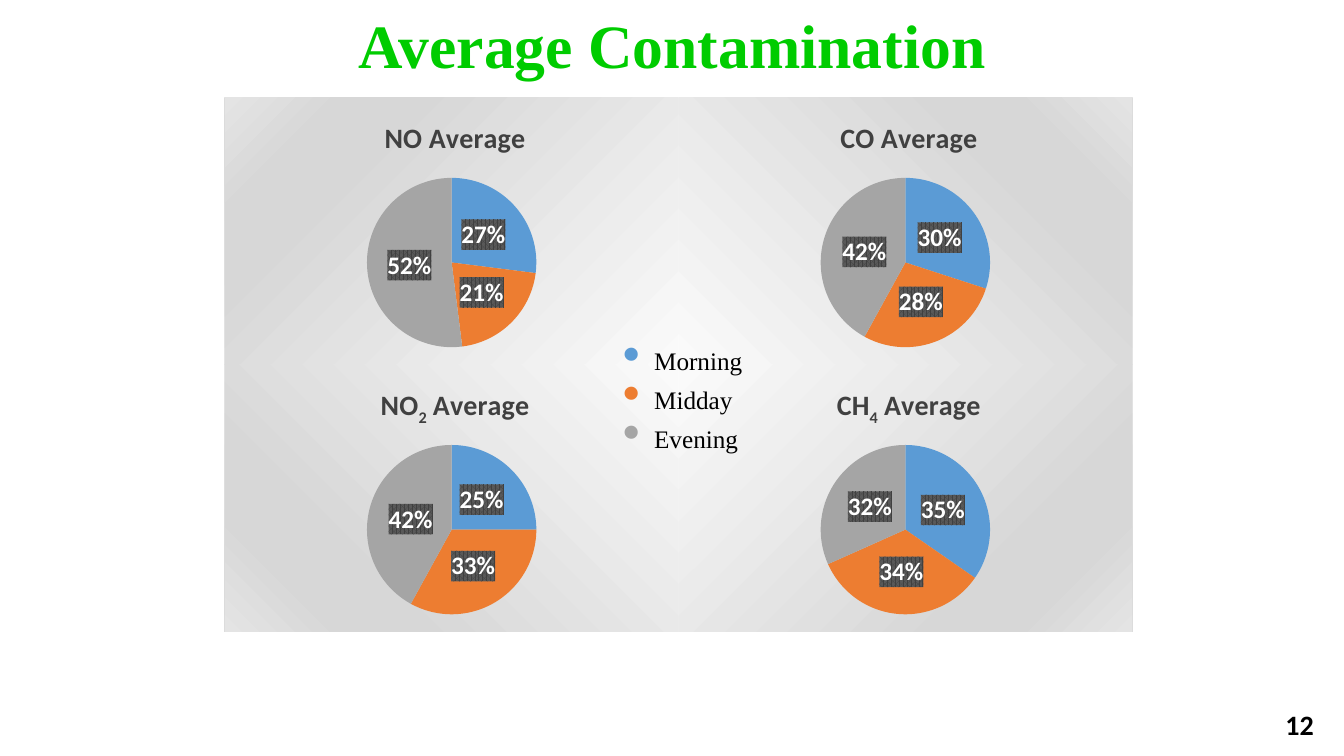
from lxml import etree
from pptx import Presentation
from pptx.chart.data import CategoryChartData
from pptx.dml.color import RGBColor
from pptx.enum.chart import XL_CHART_TYPE, XL_LABEL_POSITION
from pptx.enum.text import MSO_ANCHOR, MSO_AUTO_SIZE, PP_ALIGN
from pptx.oxml import parse_xml
from pptx.oxml.ns import nsdecls, qn
from pptx.util import Inches, Pt


def style_font(font, name, size, color, bold=False):
    font.name, font.size, font.bold = name, Pt(size), bold
    font.color.rgb = RGBColor.from_string(color)


def add_text(left, top, width, height, lines, anchor=MSO_ANCHOR.TOP):
    """Add a wrapping text box with one paragraph per line; return its frame."""
    frame = slide.shapes.add_textbox(
        Inches(left), Inches(top), Inches(width), Inches(height)).text_frame
    frame.word_wrap = True
    frame.vertical_anchor = anchor
    frame.text = "\n".join(lines)
    return frame


CHART_WIDTH, CHART_HEIGHT = 4.5, 2.65
GRID_LEFT, GRID_TOP = 2.23, 0.97
PIE_SIZE = 1.68
PERIODS = [("Morning", "5B9BD5"), ("Midday", "ED7D31"), ("Evening", "A5A5A5")]
GRADIENT = [(0, "FAFAFA"), (74, "D7D7D7"), (83, "D7D7D7"), (100, "E4E4E4")]
# gas, subscript, column, row, gradient angle, title width, values
PIES = [
    ("NO", "", 0, 0, 225, 1.39, (27, 21, 52)),
    ("NO", "2", 0, 1, 135, 1.47, (25, 33, 42)),
    ("CO", "", 1, 0, 315, 1.35, (30, 28, 42)),
    ("CH", "4", 1, 1, 45, 1.42, (35, 34, 32)),
]

deck = Presentation()
deck.slide_width, deck.slide_height = Inches(13.33), Inches(7.5)
slide = deck.slides.add_slide(deck.slide_layouts[6])

heading = add_text(0.92, 0, 11.5, 0.97, ["Average Contamination"], MSO_ANCHOR.MIDDLE)
para = heading.paragraphs[0]
para.alignment, para.line_spacing = PP_ALIGN.CENTER, 0.9
style_font(para.runs[0].font, "Times New Roman", 44, "00CC00", True)

stops = "".join(f'<a:gs pos="{position * 1000}"><a:srgbClr val="{color}"/></a:gs>'
                for position, color in GRADIENT)
for gas, subscript, column, row, angle, title_width, values in PIES:
    data = CategoryChartData()
    data.categories = ["1", "2", "3"]
    data.add_series("Series 1", values)
    chart = slide.shapes.add_chart(
        XL_CHART_TYPE.PIE,
        Inches(GRID_LEFT + column * CHART_WIDTH), Inches(GRID_TOP + row * CHART_HEIGHT),
        Inches(CHART_WIDTH), Inches(CHART_HEIGHT), data).chart
    chart.has_legend = False
    style_font(chart.font, "Calibri", 10, "000000")
    chart.font._element.getparent().getparent().getparent().addprevious(parse_xml(
        f'<c:spPr {nsdecls("c", "a")}><a:gradFill><a:gsLst>{stops}</a:gsLst>'
        f'<a:lin ang="{angle * 60000}" scaled="0"/></a:gradFill>'
        '<a:ln><a:noFill/></a:ln></c:spPr>'))

    para = chart.chart_title.text_frame.paragraphs[0]
    for text in filter(None, (gas, subscript, " Average")):
        span = para.add_run()
        span.text = text
        style_font(span.font, "Calibri", 20, "404040", True)
        if text == subscript:
            span.font._element.set("baseline", "-25000")

    plot = chart.plots[0]
    plot.vary_by_categories = True
    for index, (period, color) in enumerate(PERIODS):
        fill = plot.series[0].points[index].format.fill
        fill.solid()
        fill.fore_color.rgb = RGBColor.from_string(color)

    plot.has_data_labels = True
    labels = plot.data_labels
    labels.show_percentage, labels.show_value = True, False
    labels.number_format, labels.number_format_is_linked = "0%", False
    labels.position = XL_LABEL_POSITION.CENTER
    style_font(labels.font, "Calibri", 18, "FFFFFF", True)
    labels._element.find(qn("c:txPr")).addprevious(parse_xml(
        f'<c:spPr {nsdecls("c", "a")}><a:pattFill prst="pct75">'
        '<a:fgClr><a:srgbClr val="404040"/></a:fgClr>'
        '<a:bgClr><a:srgbClr val="595959"/></a:bgClr></a:pattFill></c:spPr>'))

    title_place = {"xMode": "edge", "yMode": "edge",
                   "x": 0.5 - title_width / CHART_WIDTH / 2, "y": 0.07}
    pie_place = {"layoutTarget": "inner", "xMode": "edge", "yMode": "edge",
                 "x": 0.5 - PIE_SIZE / CHART_WIDTH / 2, "y": 0.3,
                 "w": PIE_SIZE / CHART_WIDTH, "h": PIE_SIZE / CHART_HEIGHT}
    title = chart.chart_title._element
    area = chart._chartSpace.chart.plotArea
    for owner, place, slot in ((title, title_place, 1), (area, pie_place, 0)):
        for old in owner.findall(qn("c:layout")):
            owner.remove(old)
        layout = parse_xml(f'<c:layout {nsdecls("c")}><c:manualLayout/></c:layout>')
        for key, value in place.items():
            etree.SubElement(layout[0], qn(f"c:{key}")).set("val", str(value))
        owner.insert(slot, layout)

legend = add_text(6.08, 3.38, 1.67, 1.18, [period for period, color in PERIODS])
legend.auto_size = MSO_AUTO_SIZE.SHAPE_TO_FIT_TEXT
for para, (period, color) in zip(legend.paragraphs, PERIODS):
    properties = para._p.get_or_add_pPr()
    properties.set("marL", str(Inches(0.31)))
    properties.set("indent", str(Inches(-0.31)))
    bullet_color = etree.SubElement(properties, qn("a:buClr"))
    etree.SubElement(bullet_color, qn("a:srgbClr")).set("val", color)
    etree.SubElement(properties, qn("a:buSzPct")).set("val", "200000")
    etree.SubElement(properties, qn("a:buChar")).set("char", "•")
    style_font(para.runs[0].font, "Times New Roman", 18, "000000")
for para in legend.paragraphs[1:]:
    para.space_before = Pt(6)

number = add_text(10.13, 6.99, 3, 0.4, ["12"], MSO_ANCHOR.MIDDLE)
number.paragraphs[0].alignment = PP_ALIGN.RIGHT
style_font(number.paragraphs[0].runs[0].font, "Calibri", 20, "000000", True)

deck.save("out.pptx")
